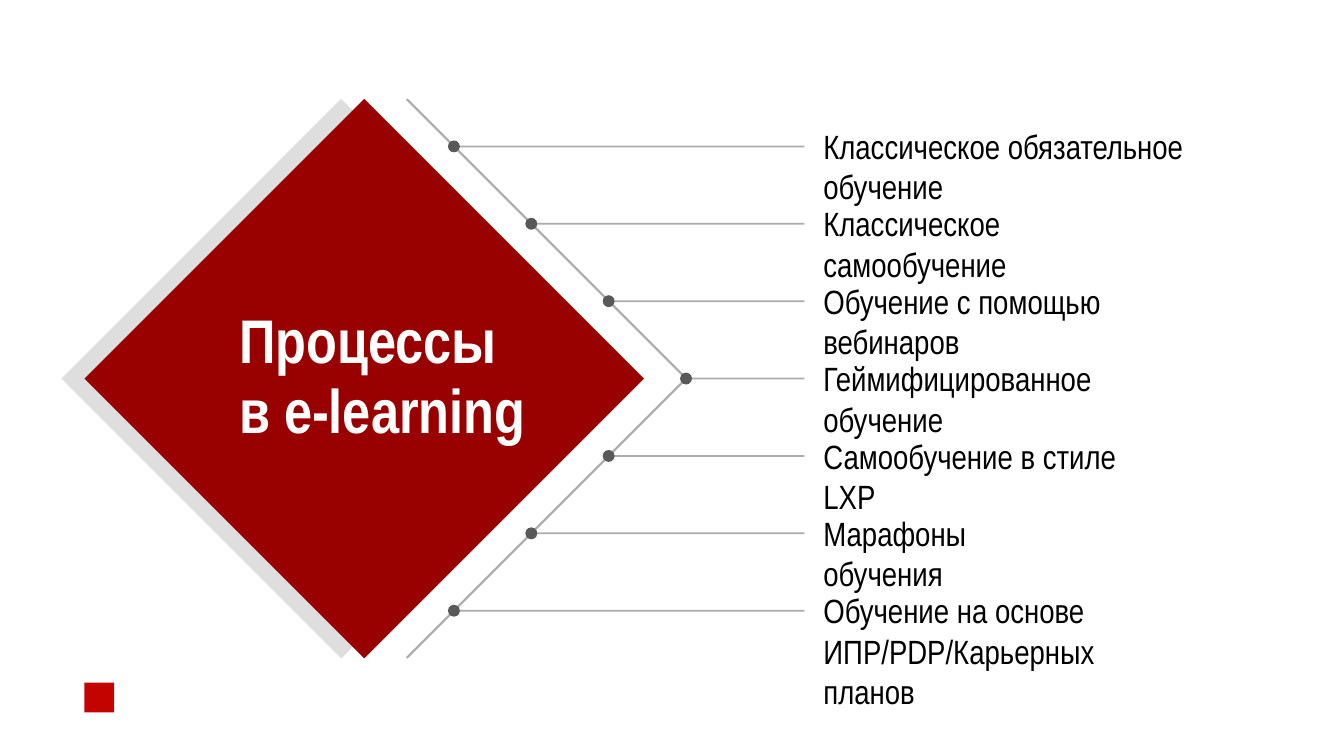
from lxml import etree
from pptx import Presentation
from pptx.dml.color import RGBColor
from pptx.enum.shapes import MSO_CONNECTOR, MSO_SHAPE
from pptx.enum.text import MSO_ANCHOR, MSO_AUTO_SIZE, PP_ALIGN
from pptx.oxml.ns import qn
from pptx.util import Cm, Pt

STRAIGHT = MSO_CONNECTOR.STRAIGHT
DIAMOND, OVAL, SQUARE = MSO_SHAPE.DIAMOND, MSO_SHAPE.OVAL, MSO_SHAPE.RECTANGLE
TOP = MSO_ANCHOR.TOP
GROW = MSO_AUTO_SIZE.SHAPE_TO_FIT_TEXT
LEFT = PP_ALIGN.LEFT

FONT = "Arial Narrow"
COLORS = {
    "shade": "262626",
    "diamond": "990000",
    "line": "595959",
    "mark": "C20300",
    "title": "FFFFFF",
    "label": "000000",
}
TITLE = "Процессы\nв e-learning"
PROCESSES = [
    ("Классическое обязательное обучение", 12.12),
    ("Классическое самообучение", 9.27),
    ("Обучение с помощью вебинаров", 10.69),
    ("Геймифицированное обучение", 10.19),
    ("Самообучение в стиле LXP", 8.56),
    ("Марафоны обучения", 7.04),
    ("Обучение на основе\nИПР/PDP/Карьерных планов", 9.42),
]

MIDDLE_Y = 9.54
ROW_STEP = 1.95
DIAMOND_SIZE = 14.1
TIP_X = 17.29
BRACKET_REACH = 7.04
LEADER_END = 20.27
LABEL_LEFT = 20.5
LABEL_RISE = 0.64
LABEL_HEIGHT = 1.27
DOT_SIZE = 0.3


def set_alpha(fill_element, percent):
    color = fill_element.find(".//" + qn("a:srgbClr"))
    etree.SubElement(color, qn("a:alpha"), val=str(percent * 1000))


def add_filled(page, kind, left, top, size, color, alpha=None):
    shape = page.shapes.add_shape(kind, Cm(left), Cm(top), Cm(size), Cm(size))
    shape.shadow.inherit = False
    shape.fill.solid()
    shape.fill.fore_color.rgb = RGBColor.from_string(COLORS[color])
    shape.line.fill.background()
    if alpha:
        set_alpha(shape.element.spPr.find(qn("a:solidFill")), alpha)


def add_line(page, start, end, width):
    points = [Cm(value) for value in (*start, *end)]
    line = page.shapes.add_connector(STRAIGHT, *points)
    line.line.width = Pt(width)
    line.line.color.rgb = RGBColor.from_string(COLORS["line"])
    properties = line.element.spPr
    set_alpha(properties.find(qn("a:ln")), 50)
    etree.SubElement(properties, qn("a:effectLst"))


def write_text(box, text, size, color, bold=False, spacing=None):
    frame = box.text_frame
    frame.text = text
    frame.word_wrap = True
    frame.auto_size = GROW
    frame.vertical_anchor = TOP
    for para in frame.paragraphs:
        para.alignment = LEFT
        para.line_spacing = spacing
        for span in para.runs:
            span.font.name = FONT
            span.font.size = Pt(size)
            span.font.bold = bold
            span.font.color.rgb = RGBColor.from_string(COLORS[color])


def add_title(page):
    title = page.shapes.title
    title.left, title.top = Cm(5.77), Cm(7.62)
    title.width, title.height = Cm(8.53), Cm(3.84)
    write_text(title, TITLE, 44, "title", bold=True, spacing=0.95)
    page.shapes.element.append(title.element)


def add_process(page, row, text, width):
    offset = (row - len(PROCESSES) // 2) * ROW_STEP
    y = MIDDLE_Y + offset
    x = TIP_X - abs(offset)
    add_line(page, (LEADER_END, y), (x, y), 1.25)
    add_filled(page, OVAL, x - DOT_SIZE / 2, y - DOT_SIZE / 2, DOT_SIZE, "line")
    label = page.shapes.add_textbox(
        Cm(LABEL_LEFT), Cm(y - LABEL_RISE), Cm(width), Cm(LABEL_HEIGHT)
    )
    write_text(label, text, 24, "label")


def main():
    deck = Presentation()
    deck.slide_width, deck.slide_height = Cm(33.87), Cm(19.05)
    page = deck.slides.add_slide(deck.slide_layouts[5])

    diamond_top = MIDDLE_Y - DIAMOND_SIZE / 2
    add_filled(page, DIAMOND, 1.55, diamond_top, DIAMOND_SIZE, "shade", alpha=15)
    add_filled(page, DIAMOND, 2.13, diamond_top, DIAMOND_SIZE, "diamond")
    add_filled(page, SQUARE, 2.13, 17.2, 0.75, "mark")
    add_title(page)

    for side in (-1, 1):
        start = (TIP_X - BRACKET_REACH, MIDDLE_Y + side * BRACKET_REACH)
        add_line(page, start, (TIP_X, MIDDLE_Y), 1.5)
    for row, (text, width) in enumerate(PROCESSES):
        add_process(page, row, text, width)

    deck.save("out.pptx")


if __name__ == "__main__":
    main()
